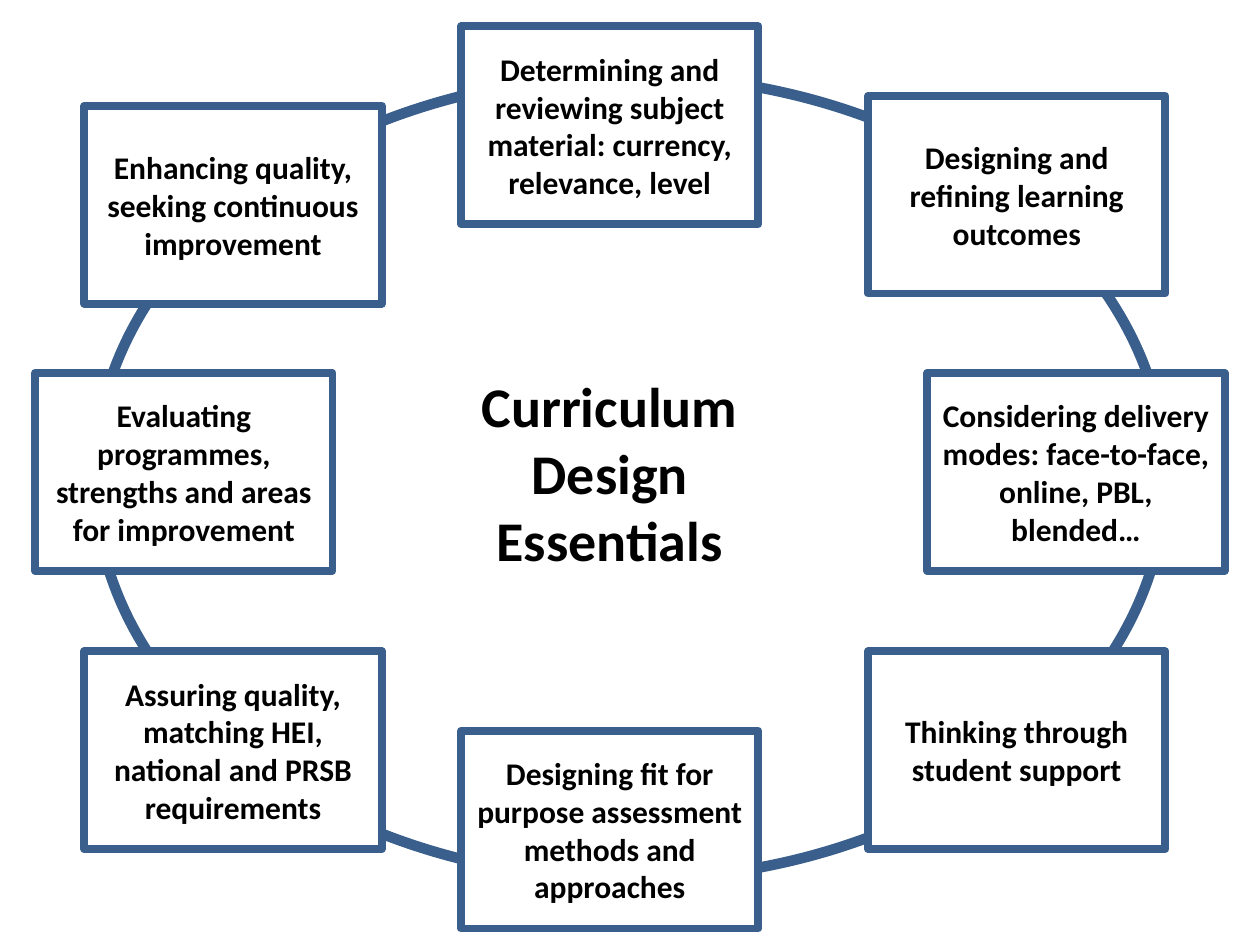
"""Build the curriculum design cycle slide."""
from pptx import Presentation
from pptx.dml.color import RGBColor
from pptx.enum.shapes import MSO_SHAPE as SHAPE
from pptx.enum.text import MSO_ANCHOR as ANCHOR, PP_ALIGN as ALIGN
from pptx.util import Inches, Pt

BLUE, WHITE, BLACK = "3A5F8C", "FFFFFF", "000000"
BOX_W, BOX_H = 2.36, 1.57
CENTER_X, MIDDLE_Y = 3.66, 2.96
LEFT_X, RIGHT_X, LOWER_Y = 0.67, 6.89, 5.17


def paint(part, color):
    part.solid()
    part.fore_color.rgb = RGBColor.from_string(color)


def add_outlined(kind, x, y, w, h, line, width):
    sp = s.shapes.add_shape(kind, Inches(x), Inches(y), Inches(w), Inches(h))
    sp.shadow.inherit = False
    paint(sp.fill, WHITE)
    paint(sp.line.fill, line)
    sp.line.width = Pt(width)
    return sp


prs = Presentation()
prs.slide_width, prs.slide_height = Inches(10), Inches(7.5)
s = prs.slides.add_slide(prs.slide_layouts[6])

add_outlined(SHAPE.OVAL, 0.75, 0.6, 8.5, 6.38, BLUE, 6)

boxes = [
    (0.28, MIDDLE_Y, ["Evaluating programmes, strengths and areas for improvement"], 18, BLUE),
    (7.36, MIDDLE_Y, ["Considering delivery modes: face-to-face, online, PBL, blended…"], 18, BLUE),
    (CENTER_X, 0.21, ["Determining and reviewing subject material: currency, relevance, level"], 18, BLUE),
    (CENTER_X, 5.8, ["Designing fit for purpose assessment methods and approaches"], 18, BLUE),
    (LEFT_X, 0.84, ["Enhancing quality, seeking continuous improvement"], 18, BLUE),
    (RIGHT_X, 0.76, ["Designing and refining learning outcomes"], 18, BLUE),
    (LEFT_X, LOWER_Y, ["Assuring quality, matching HEI, national and PRSB requirements"], 18, BLUE),
    (RIGHT_X, LOWER_Y, ["Thinking through student support"], 18, BLUE),
    (CENTER_X, MIDDLE_Y, ["Curriculum", "Design", "Essentials"], 32, WHITE),
]
for x, y, lines, size, line in boxes:
    tf = add_outlined(SHAPE.RECTANGLE, x, y, BOX_W, BOX_H, line, 4.5).text_frame
    tf.word_wrap = True
    tf.vertical_anchor = ANCHOR.MIDDLE
    tf.text = "\n".join(lines)
    for p in tf.paragraphs:
        p.alignment = ALIGN.CENTER
        p.font.name = "Calibri"
        p.font.size = Pt(size)
        p.font.bold = True
        paint(p.font.fill, BLACK)

prs.save("out.pptx")
